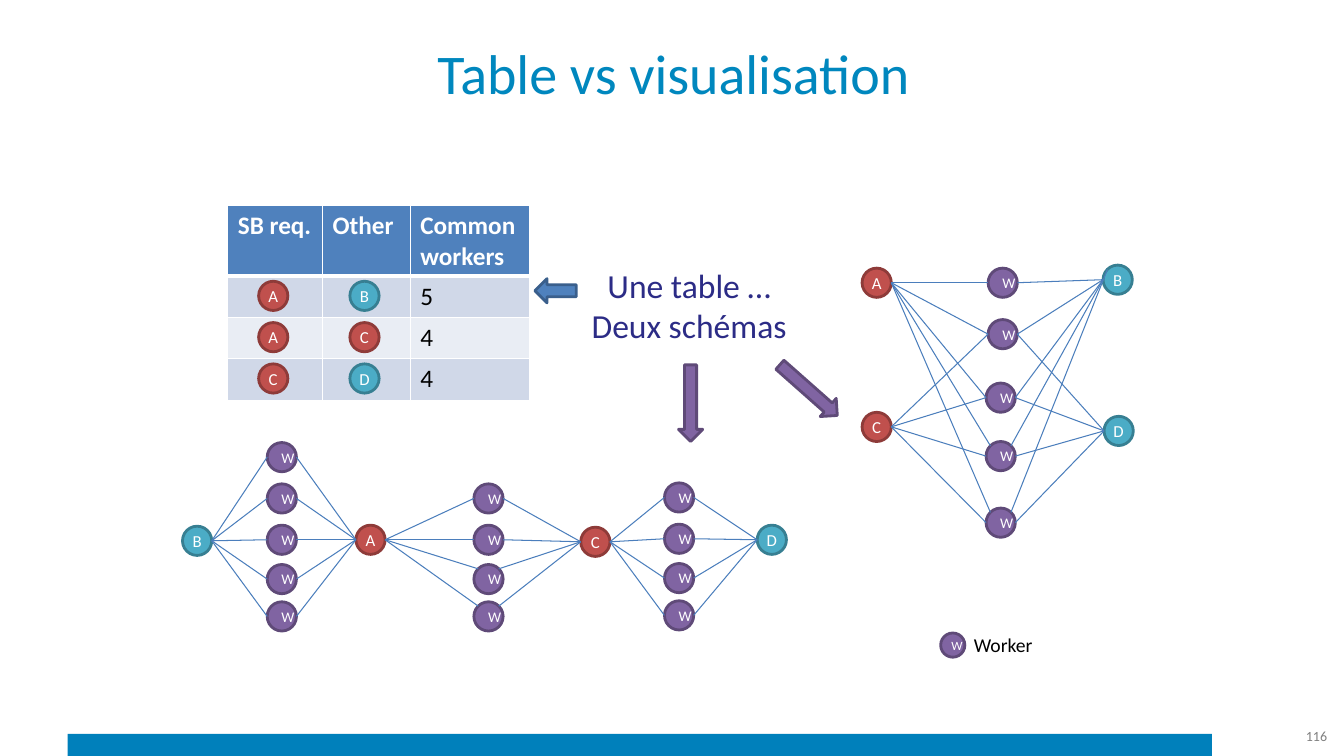
from dataclasses import dataclass

import lxml.etree
import pptx
import pptx.dml.color
import pptx.enum.shapes
import pptx.enum.text
import pptx.oxml
import pptx.oxml.ns
import pptx.util

Inches = pptx.util.Inches
Pt = pptx.util.Pt
Shape = pptx.enum.shapes.MSO_SHAPE
Align = pptx.enum.text.PP_ALIGN
Anchor = pptx.enum.text.MSO_ANCHOR


@dataclass(frozen=True)
class Theme:
    font: str = "Calibri"
    title: str = "0087BE"
    bar: str = "0080BB"
    caption: str = "2C2C86"
    number: str = "808080"
    black: str = "000000"
    white: str = "FFFFFF"
    link: str = "4B7EBC"
    header: str = "4F81BD"
    bands: tuple = ("D0D8E8", "E9EDF4")
    red: tuple = ("C0504D", "8E3B39")
    teal: tuple = ("4BACC6", "377F92")
    purple: tuple = ("8064A2", "5F4A78")
    blue: tuple = ("4F81BD", "3A5F8C")
    title_size: float = 40
    caption_size: float = 24
    table_size: float = 18
    legend_size: float = 14
    hub_size: float = 12
    worker_size: float = 10.5
    small_size: float = 9
    number_size: float = 10
    outline: float = 2
    link_width: float = 0.75


THEME = Theme()
NODE = 0.29
HUBS = {"A": THEME.red, "C": THEME.red, "B": THEME.teal, "D": THEME.teal}
PORTS = {"left": (0, 0.5), "right": (1, 0.5), "top_left": (0.15, 0.15), "top_right": (0.85, 0.15)}


def rgb(value):
    return pptx.dml.color.RGBColor.from_string(value)


def style_text(text_frame, size, color, align=None, bold=False):
    for paragraph in text_frame.paragraphs:
        paragraph.alignment = align
        for run in paragraph.runs:
            run.font.name = THEME.font
            run.font.size = Pt(size)
            run.font.bold = bold
            run.font.color.rgb = rgb(color)


def add_filled(shapes, kind, left, top, width, height, colors):
    shape = shapes.add_shape(kind, Inches(left), Inches(top), Inches(width), Inches(height))
    fill, line = colors
    shape.shadow.inherit = False
    shape.fill.solid()
    shape.fill.fore_color.rgb = rgb(fill)
    if line:
        shape.line.color.rgb = rgb(line)
        shape.line.width = Pt(THEME.outline)
    else:
        shape.line.fill.background()
    return shape


def add_node(shapes, label, left, top, size=NODE, text_size=None):
    node = add_filled(shapes, Shape.OVAL, left, top, size, size, HUBS.get(label, THEME.purple))
    text_frame = node.text_frame
    text_frame.text = label
    text_frame.vertical_anchor = Anchor.MIDDLE
    if label in HUBS:
        text_frame.margin_left = text_frame.margin_right = 0
        text_frame.margin_top = text_frame.margin_bottom = 0
    default_size = THEME.hub_size if label in HUBS else THEME.worker_size
    style_text(text_frame, text_size or default_size, THEME.white, Align.CENTER)
    return node


def port_position(node, port):
    across, down = PORTS[port]
    return int(node.left + across * node.width), int(node.top + down * node.height)


def link(shapes, source, target, start="right", end="left"):
    connector = shapes.add_connector(
        pptx.enum.shapes.MSO_CONNECTOR.STRAIGHT,
        *port_position(source, start), *port_position(target, end))
    connector.line.color.rgb = rgb(THEME.link)
    connector.line.width = Pt(THEME.link_width)
    lxml.etree.SubElement(connector._element.spPr, pptx.oxml.ns.qn("a:effectLst"))


def add_text(shapes, text, left, top, width, height, size, color, align=None, anchor=Anchor.TOP):
    box = shapes.add_textbox(Inches(left), Inches(top), Inches(width), Inches(height))
    box.text_frame.text = text
    box.text_frame.word_wrap = False
    box.text_frame.vertical_anchor = anchor
    style_text(box.text_frame, size, color, align)


def add_frame(slide):
    add_filled(slide.shapes, Shape.RECTANGLE, 0.67, 7.28, 11.35, 0.25, (THEME.bar, None))
    title = slide.shapes.title
    title.left, title.top = Inches(0.68), Inches(0.21)
    title.width, title.height = Inches(12), Inches(1.01)
    title.text_frame.text = "Table vs visualisation"
    title.text_frame.vertical_anchor = Anchor.MIDDLE
    style_text(title.text_frame, THEME.title_size, THEME.title, Align.CENTER)
    add_text(slide.shapes, "116", 12.17, 7.1, 1.09, 0.4,
             THEME.number_size, THEME.number, Align.RIGHT, Anchor.MIDDLE)


def set_borders(cell, widths):
    properties = cell._tc.get_or_add_tcPr()
    for index, (side, width) in enumerate(widths.items()):
        border = pptx.oxml.parse_xml(
            f'<a:ln{side} {pptx.oxml.ns.nsdecls("a")} w="{Pt(width)}"><a:solidFill>'
            f'<a:srgbClr val="{THEME.white}"/></a:solidFill></a:ln{side}>')
        properties.insert(index, border)


def add_pairs_table(slide, left, top):
    widths, header_height, row_height = (0.94, 0.87, 1.18), 0.7, 0.41
    headings = ("SB req.", "Other", "Common workers")
    pairs = (("A", "B", "5"), ("A", "C", "4"), ("C", "D", "4"))
    frame = slide.shapes.add_table(
        len(pairs) + 1, len(widths), Inches(left), Inches(top),
        Inches(sum(widths)), Inches(header_height + row_height * len(pairs)))
    table = frame.table
    for column, width in zip(table.columns, widths):
        column.width = Inches(width)
    for index, row in enumerate(table.rows):
        row.height = Inches(row_height if index else header_height)
        values = ("", "", pairs[index - 1][2]) if index else headings
        for cell, text in zip(row.cells, values):
            cell.text = text
            cell.fill.solid()
            cell.fill.fore_color.rgb = rgb(THEME.bands[(index - 1) % 2] if index else THEME.header)
            style_text(cell.text_frame, THEME.table_size,
                       THEME.black if index else THEME.white, bold=index == 0)
            set_borders(cell, {"L": 1, "R": 1, "T": 3 if index == 1 else 1, "B": 1 if index else 3})
    for row, pair in enumerate(pairs):
        for column, label in enumerate(pair[:2]):
            center = left + sum(widths[:column]) + widths[column] / 2 - 0.02
            add_node(slide.shapes, label, center - NODE / 2,
                     top + header_height + 0.05 + row * row_height)


def add_chain(slide, left, top):
    shapes = slide.shapes.add_group_shape().shapes
    rows = (0, 0.41, 0.82, 1.21, 1.58)
    hubs = [add_node(shapes, label, left + x, top + y) for label, x, y in
            (("B", 0, 0.83), ("A", 1.72, 0.82), ("C", 3.95, 0.84), ("D", 5.7, 0.82))]
    columns = ((0.84, 0, rows), (2.89, 0, rows[1:]), (4.78, -0.01, rows[1:]))
    for index, (x, shift, offsets) in enumerate(columns):
        for row, y in enumerate(offsets):
            worker = add_node(shapes, "W", left + x, top + y + shift)
            corner = "top_" if index == 1 and row > 1 else ""
            link(shapes, hubs[index], worker, end=corner + "left")
            link(shapes, worker, hubs[index + 1], start=corner + "right")


def add_network(slide, left, top):
    shapes = slide.shapes.add_group_shape().shapes
    hub_a, hub_c, hub_b, hub_d = [
        add_node(shapes, label, left + x, top + y) for label, x, y in
        (("A", 0, 0.03), ("C", 0, 1.46), ("B", 2.39, 0), ("D", 2.4, 1.5))]
    positions = ((1.25, 0.03), (1.25, 0.54), (1.23, 1.17), (1.23, 1.75), (1.23, 2.41))
    for row, (x, y) in enumerate(positions):
        worker = add_node(shapes, "W", left + x, top + y)
        corner = "top_" if row > 2 else ""
        link(shapes, hub_a, worker, end=corner + "left")
        link(shapes, worker, hub_b, corner + "right", "top_left" if row == 4 else "left")
        if row:
            link(shapes, hub_c, worker)
            link(shapes, worker, hub_d)


def add_caption(slide, left, top):
    add_text(slide.shapes, "Une table …\nDeux schémas", left, top, 2.15, 0.91,
             THEME.caption_size, THEME.caption, Align.CENTER)
    arrows = ((-0.37, 0.1, 0.41, 90, THEME.blue),
              (0.97, 1.04, 0.76, 0, THEME.purple),
              (2.14, 0.91, 0.76, 311.5, THEME.purple))
    for x, y, length, rotation, colors in arrows:
        arrow = add_filled(slide.shapes, Shape.DOWN_ARROW, left + x, top + y, 0.24, length, colors)
        arrow.rotation = rotation


def add_legend(slide, left, top):
    add_node(slide.shapes, "W", left, top + 0.05, 0.24, THEME.small_size)
    add_text(slide.shapes, "Worker", left + 0.23, top, 0.79, 0.34, THEME.legend_size, THEME.black)


def main():
    presentation = pptx.Presentation()
    presentation.slide_width, presentation.slide_height = Inches(13.33), Inches(7.5)
    slide = presentation.slides.add_slide(presentation.slide_layouts[5])
    add_frame(slide)
    add_chain(slide, 1.81, 4.39)
    add_network(slide, 8.55, 2.63)
    add_pairs_table(slide, 2.26, 2.04)
    add_legend(slide, 9.33, 6.23)
    add_caption(slide, 5.76, 2.58)
    presentation.save("out.pptx")


if __name__ == "__main__":
    main()
